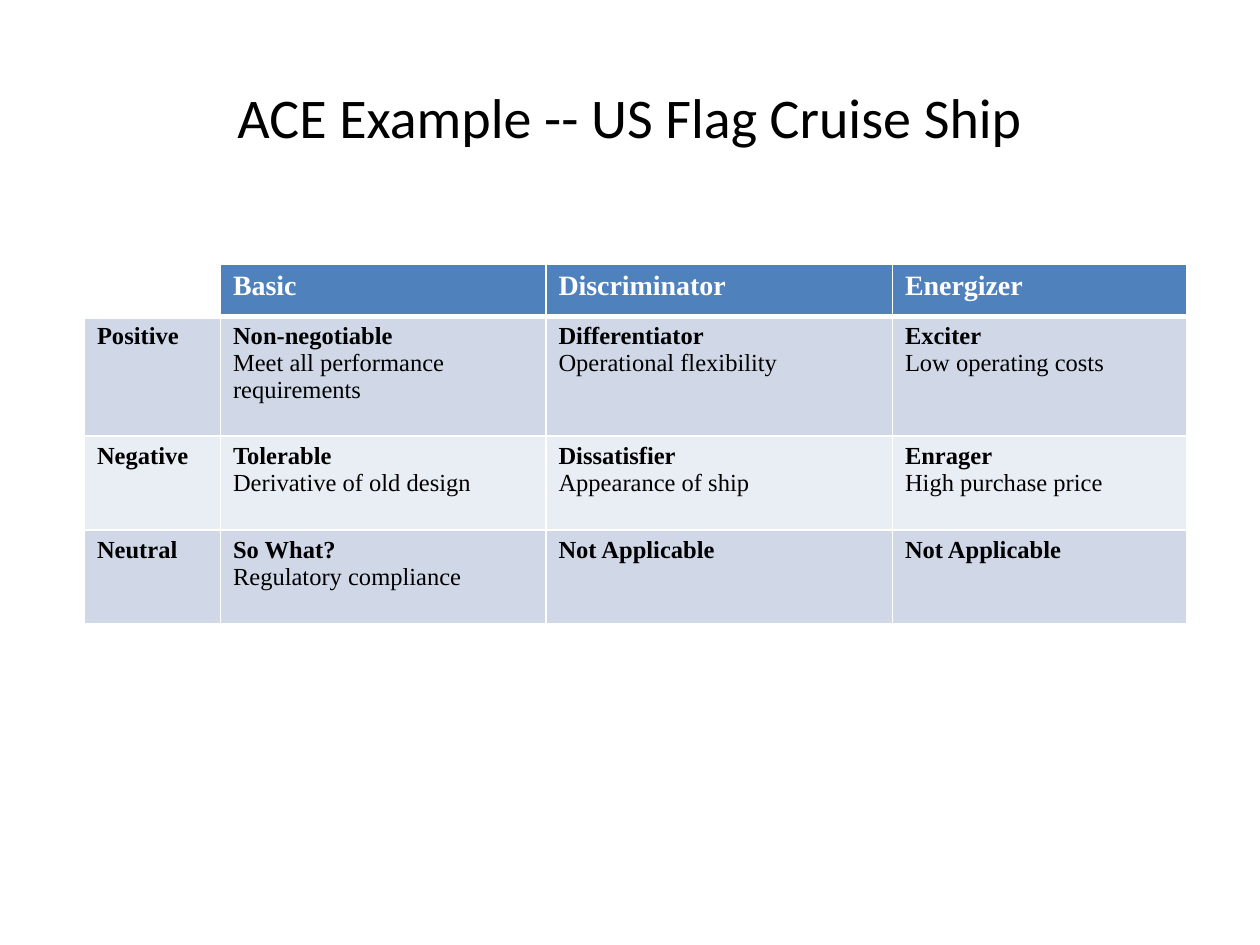
from lxml import etree
from pptx import Presentation
from pptx.dml.color import RGBColor
from pptx.enum.text import MSO_ANCHOR, PP_ALIGN
from pptx.oxml.ns import qn
from pptx.util import Pt

CENTER = PP_ALIGN.CENTER
MIDDLE = MSO_ANCHOR.MIDDLE

BLACK = RGBColor(0x00, 0x00, 0x00)
WHITE = RGBColor(0xFF, 0xFF, 0xFF)
HEADER_BLUE = RGBColor(0x4F, 0x81, 0xBD)
BAND_DARK = RGBColor(0xD0, 0xD8, 0xE8)
BAND_LIGHT = RGBColor(0xE9, 0xED, 0xF4)

COLUMN_WIDTHS = (77.75, 186, 198, 168)
ROW_HEIGHTS = (29.5, 68.5, 53.75, 53.75)

# Each cell is a list of lines; the first line is bold
CELLS = [
    [[], ["Basic"], ["Discriminator"], ["Energizer"]],
    [["Positive"],
     ["Non-negotiable", "Meet all performance requirements"],
     ["Differentiator", "Operational flexibility"],
     ["Exciter", "Low operating costs"]],
    [["Negative"],
     ["Tolerable", "Derivative of old design"],
     ["Dissatisfier", "Appearance of ship"],
     ["Enrager", "High purchase price"]],
    [["Neutral"],
     ["So What?", "Regulatory compliance"],
     ["Not Applicable"],
     ["Not Applicable"]],
]


class SlideBuilder:
    title_font = "Calibri"
    table_font = "Times New Roman"

    def __init__(self, slide):
        self.slide = slide

    def style(self, paragraph, name, size, color, bold=False):
        font = paragraph.font
        font.name, font.size, font.bold = name, Pt(size), bold
        font.color.rgb = color

    def title(self, text, left, top, width, height):
        shape = self.slide.shapes.add_textbox(
            Pt(left), Pt(top), Pt(width), Pt(height))
        frame = shape.text_frame
        frame.word_wrap = True
        frame.vertical_anchor = MIDDLE
        paragraph = frame.paragraphs[0]
        paragraph.text = text
        paragraph.alignment = CENTER
        self.style(paragraph, self.title_font, 32, BLACK)

    def borders(self, cell, top, bottom):
        properties = cell._tc.get_or_add_tcPr()
        for side, width in (("L", 1), ("R", 1), ("T", top), ("B", bottom)):
            line = etree.SubElement(
                properties, qn(f"a:ln{side}"), w=str(Pt(width)))
            fill = etree.SubElement(line, qn("a:solidFill"))
            etree.SubElement(fill, qn("a:srgbClr"), val=str(WHITE))

    def cell(self, cell, lines, fill, size, color):
        if not lines:
            cell.fill.background()
            return
        cell.fill.solid()
        cell.fill.fore_color.rgb = fill
        cell.text = "\n".join(lines)
        for index, paragraph in enumerate(cell.text_frame.paragraphs):
            self.style(paragraph, self.table_font, size, color, index == 0)

    def table(self, cells, left, top, widths, heights):
        table = self.slide.shapes.add_table(
            len(heights), len(widths), Pt(left), Pt(top),
            Pt(sum(widths)), Pt(sum(heights))).table
        table.first_row = table.horz_banding = False
        for column, width in zip(table.columns, widths):
            column.width = Pt(width)
        for row, height in zip(table.rows, heights):
            row.height = Pt(height)
        for i, row_cells in enumerate(cells):
            if i == 0:
                look = (HEADER_BLUE, 16, WHITE)
            else:
                look = (BAND_DARK if i % 2 else BAND_LIGHT, 14, BLACK)
            for j, lines in enumerate(row_cells):
                cell = table.cell(i, j)
                # A thick rule separates the header from the body
                self.borders(cell, 3 if i == 1 else 1, 3 if i == 0 else 1)
                self.cell(cell, lines, *look)


def main():
    presentation = Presentation()
    presentation.slide_width, presentation.slide_height = Pt(720), Pt(540)
    slide = presentation.slides.add_slide(presentation.slide_layouts[6])
    builder = SlideBuilder(slide)

    # Title
    builder.title("ACE Example -- US Flag Cruise Ship", 36, 21.6, 648, 90)

    # Table of features by attitude
    builder.table(CELLS, 48.25, 151.2, COLUMN_WIDTHS, ROW_HEIGHTS)

    presentation.save("out.pptx")


if __name__ == "__main__":
    main()
